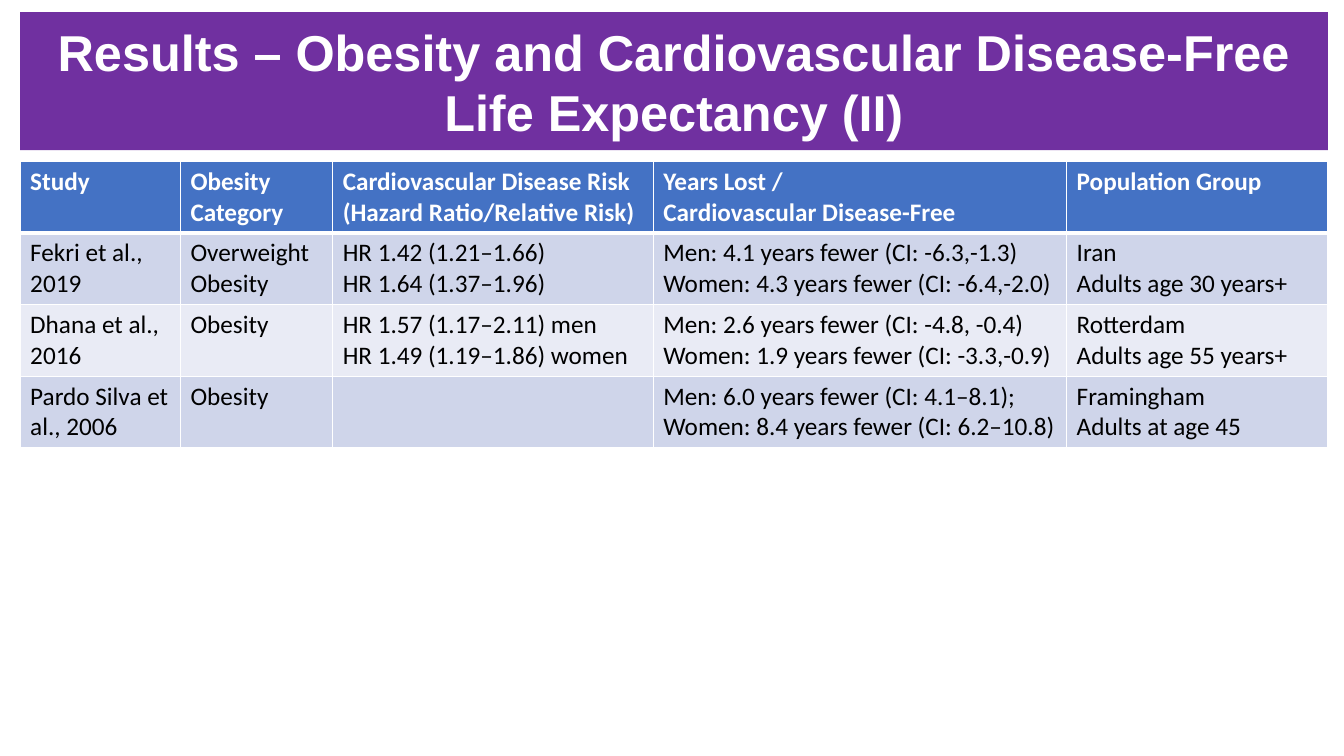
from dataclasses import dataclass

from lxml.etree import SubElement
from pptx import Presentation
from pptx.dml.color import RGBColor
from pptx.enum.shapes import MSO_SHAPE as Shape
from pptx.enum.text import MSO_ANCHOR as Anchor, PP_ALIGN as Align
from pptx.oxml.ns import qn
from pptx.slide import Slide
from pptx.table import _Cell as Cell
from pptx.text.text import _Paragraph as Paragraph
from pptx.util import Inches, Pt

WHITE, BLACK, PURPLE, BLUE = "FFFFFF", "000000", "7030A0", "4472C4"
BANDS = ("CFD5EA", "E9EBF5")
LEFT, WIDTH = 0.2, 12.97
TABLE_TOP, ROW_HEIGHT = 1.6, 0.71
COLUMN_WIDTHS = (1.59, 1.51, 3.18, 4.1, 2.59)
TITLE = "Results – Obesity and Cardiovascular Disease-Free Life Expectancy (II)"


@dataclass(frozen=True)
class StudyRow:
    study: str
    category: str
    risk: str
    years_lost: str
    population: str

    def columns(self) -> tuple[str, ...]:
        return self.study, self.category, self.risk, self.years_lost, self.population


ROWS = (
    StudyRow("Study", "Obesity Category",
             "Cardiovascular Disease Risk (Hazard Ratio/Relative Risk)",
             "Years Lost /\nCardiovascular Disease-Free", "Population Group"),
    StudyRow("Fekri et al., 2019", "Overweight Obesity",
             "HR 1.42 (1.21–1.66)\nHR 1.64 (1.37–1.96)",
             "Men: 4.1 years fewer (CI: -6.3,-1.3) Women: 4.3 years fewer (CI: -6.4,-2.0)",
             "Iran\nAdults age 30 years+"),
    StudyRow("Dhana et al., 2016", "Obesity",
             "HR 1.57 (1.17–2.11) men\nHR 1.49 (1.19–1.86) women",
             "Men: 2.6 years fewer (CI: -4.8, -0.4) Women: 1.9 years fewer (CI: -3.3,-0.9)",
             "Rotterdam\nAdults age 55 years+"),
    StudyRow("Pardo Silva et al., 2006", "Obesity", "",
             "Men: 6.0 years fewer (CI: 4.1–8.1);\nWomen: 8.4 years fewer (CI: 6.2–10.8)",
             "Framingham\nAdults at age 45"),
)


def rgb(color: str) -> RGBColor:
    return RGBColor.from_string(color)


def add_run(paragraph: Paragraph, text: str, font: str, size: float, color: str, bold: bool) -> None:
    run = paragraph.add_run()
    run.text = text
    run.font.name, run.font.size, run.font.bold = font, Pt(size), bold
    run.font.color.rgb = rgb(color)


def draw_title(slide: Slide) -> None:
    banner = slide.shapes.add_shape(
        Shape.RECTANGLE, Inches(LEFT), Inches(0.12), Inches(WIDTH), Inches(1.37))
    banner.shadow.inherit = False
    banner.fill.solid()
    banner.fill.fore_color.rgb = rgb(PURPLE)
    banner.line.fill.background()
    frame = banner.text_frame
    frame.word_wrap = True
    frame.vertical_anchor = Anchor.MIDDLE
    frame.margin_left = frame.margin_right = Inches(0.16)
    frame.margin_top = frame.margin_bottom = Inches(0.08)
    heading = frame.paragraphs[0]
    heading.alignment = Align.CENTER
    add_run(heading, TITLE, "Arial", 36, WHITE, True)


def set_borders(cell: Cell, top: float, bottom: float) -> None:
    properties = cell._tc.get_or_add_tcPr()
    for side, width in (("L", 1), ("R", 1), ("T", top), ("B", bottom)):
        border = SubElement(properties, qn(f"a:ln{side}"), w=str(Pt(width)))
        SubElement(SubElement(border, qn("a:solidFill")), qn("a:srgbClr"), val=WHITE)


def fill_cell(cell: Cell, text: str, row_index: int) -> None:
    is_header = row_index == 0
    set_borders(cell, top=3 if row_index == 1 else 1, bottom=3 if is_header else 1)
    cell.fill.solid()
    cell.fill.fore_color.rgb = rgb(BLUE if is_header else BANDS[(row_index - 1) % 2])
    frame = cell.text_frame
    for line_index, line in enumerate(text.splitlines()):
        paragraph = frame.add_paragraph() if line_index else frame.paragraphs[0]
        add_run(paragraph, line, "Calibri", 18, WHITE if is_header else BLACK, is_header)


def draw_studies(slide: Slide) -> None:
    studies = slide.shapes.add_table(
        len(ROWS), len(COLUMN_WIDTHS), Inches(LEFT), Inches(TABLE_TOP),
        Inches(WIDTH), Inches(ROW_HEIGHT * len(ROWS))).table
    for column, width in zip(studies.columns, COLUMN_WIDTHS):
        column.width = Inches(width)
    for row_index, study_row in enumerate(ROWS):
        for column_index, text in enumerate(study_row.columns()):
            fill_cell(studies.cell(row_index, column_index), text, row_index)


def main() -> None:
    deck = Presentation()
    deck.slide_width, deck.slide_height = Inches(13.33), Inches(7.5)
    slide = deck.slides.add_slide(deck.slide_layouts[6])
    draw_title(slide)
    draw_studies(slide)
    deck.save("out.pptx")


if __name__ == "__main__":
    main()
